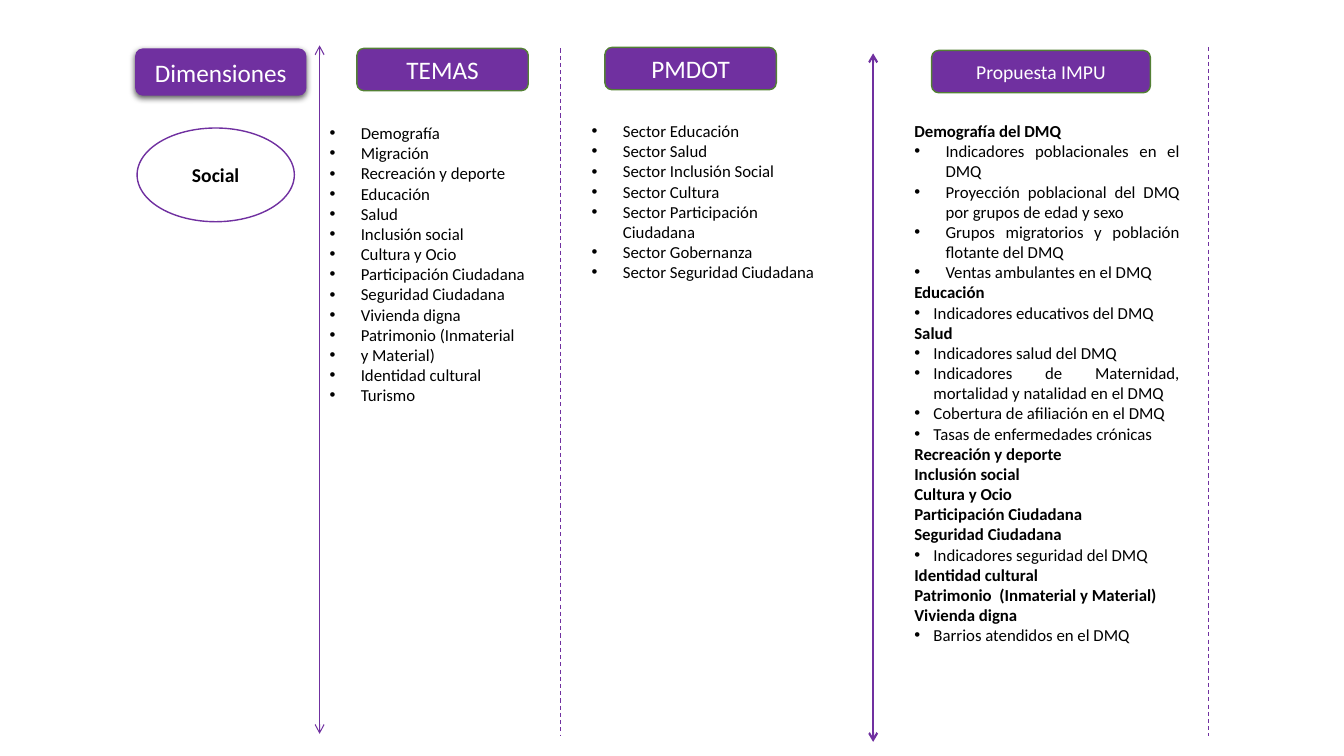
"""Build the social dimension slide: themes, PMDOT sectors and the IMPU proposal."""
from pptx import Presentation
from pptx.dml.color import RGBColor
from pptx.enum.dml import MSO_LINE_DASH_STYLE as DASH
from pptx.enum.shapes import MSO_CONNECTOR, MSO_SHAPE as SHAPE
from pptx.enum.text import MSO_ANCHOR, PP_ALIGN
from pptx.oxml.ns import qn
from pptx.util import Inches, Pt
from lxml.etree import SubElement

COLORS = {"purple": "7030A0", "green": "538035", "white": "FFFFFF", "black": "000000"}
FONT = "Calibri"
WIDE, NARROW = 0.31, 0.19

HEADERS = [
    ("Dimensiones", (1.34, 0.48, 1.7, 0.47), 18, None),
    ("TEMAS", (3.54, 0.48, 1.7, 0.42), 18, "green"),
    ("PMDOT", (6, 0.47, 1.7, 0.42), 18, "green"),
    ("Propuesta IMPU", (9.24, 0.5, 2.17, 0.42), 14, "green"),
]
DIMENSION = ("Social", (1.36, 1.27, 1.56, 0.93))
ARROWS = [(3.17, 0.45, 7.28, 0.75), (8.66, 0.53, 7.36, 1.5)]
DIVIDERS = [(5.56, 0.48, 7.3, 0.75), (11.99, 0.47, 7.3, 0.75)]

THEMES = [
    "Demografía", "Migración", "Recreación y deporte", "Educación", "Salud",
    "Inclusión social", "Cultura y Ocio", "Participación Ciudadana",
    "Seguridad Ciudadana", "Vivienda digna", "Patrimonio (Inmaterial",
    "y Material)", "Identidad cultural", "Turismo",
]
SECTORS = [
    "Sector Educación", "Sector Salud", "Sector Inclusión Social", "Sector Cultura",
    "Sector Participación", "Ciudadana", "Sector Gobernanza",
    "Sector Seguridad Ciudadana",
]
CONTINUATION = "Ciudadana"
PROPOSAL = [
    ("Demografía del DMQ", WIDE, [
        "Indicadores poblacionales en el DMQ",
        "Proyección poblacional del DMQ por grupos de edad y sexo",
        "Grupos migratorios y población flotante del DMQ",
        "Ventas ambulantes en el DMQ",
    ]),
    ("Educación", NARROW, ["Indicadores educativos del DMQ"]),
    ("Salud", NARROW, [
        "Indicadores salud del DMQ",
        "Indicadores de Maternidad, mortalidad y natalidad en el DMQ",
        "Cobertura de afiliación en el DMQ",
        "Tasas de enfermedades crónicas",
    ]),
    ("Recreación y deporte", NARROW, []),
    ("Inclusión social", NARROW, []),
    ("Cultura y Ocio", NARROW, []),
    ("Participación Ciudadana", NARROW, []),
    ("Seguridad Ciudadana", NARROW, ["Indicadores seguridad del DMQ"]),
    ("Identidad cultural", NARROW, []),
    ("Patrimonio  (Inmaterial y Material)", NARROW, []),
    ("Vivienda digna", NARROW, ["Barrios atendidos en el DMQ"]),
]


def color(name):
    return RGBColor.from_string(COLORS[name])


def style(p, size, name, bold=False, align=PP_ALIGN.CENTER):
    p.alignment = align
    for r in p.runs:
        r.font.name, r.font.size, r.font.bold = FONT, Pt(size), bold
        r.font.color.rgb = color(name)


def add_label(slide, kind, text, box, size, fill, line, ink, bold=False):
    sp = slide.shapes.add_shape(kind, *map(Inches, box))
    sp.shadow.inherit = False
    sp.fill.solid()
    sp.fill.fore_color.rgb = color(fill)
    if line:
        sp.line.color.rgb = color(line)
        sp.line.width = Pt(1)
    else:
        sp.line.fill.background()
    tf = sp.text_frame
    tf.vertical_anchor = MSO_ANCHOR.MIDDLE
    tf.text = text
    style(tf.paragraphs[0], size, ink, bold)
    return sp


def add_shadow(sp):
    effects = sp._element.spPr.find(qn("a:effectLst"))
    shadow = SubElement(effects, qn("a:outerShdw"), blurRad=str(Pt(4.5)),
                        dist=str(Pt(1.5)), dir="5400000", rotWithShape="0")
    shade = SubElement(shadow, qn("a:srgbClr"), val=COLORS["black"])
    SubElement(shade, qn("a:alpha"), val="63000")


def add_rule(slide, x, top, bottom, width, arrows):
    line = slide.shapes.add_connector(
        MSO_CONNECTOR.STRAIGHT, Inches(x), Inches(top), Inches(x), Inches(bottom))
    line.line.color.rgb = color("purple")
    line.line.width = Pt(width)
    if arrows:
        ln = line.line._get_or_add_ln()
        for end in ("a:headEnd", "a:tailEnd"):
            SubElement(ln, qn(end), type="arrow")
    else:
        line.line.dash_style = DASH.DASH
    SubElement(line._element.spPr, qn("a:effectLst"))


def add_list(slide, box, items):
    tf = slide.shapes.add_textbox(*map(Inches, box)).text_frame
    tf.word_wrap = True
    for i, (text, indent, bullet) in enumerate(items):
        p = tf.add_paragraph() if i else tf.paragraphs[0]
        p.text = text
        style(p, 12, "black", not indent, PP_ALIGN.JUSTIFY)
        pPr = p._p.get_or_add_pPr()
        pPr.set("marL", str(Inches(indent)))
        if bullet:
            pPr.set("indent", str(-Inches(indent)))
            SubElement(pPr, qn("a:buFont"), typeface="Arial")
            SubElement(pPr, qn("a:buChar"), char="•")


def main():
    prs = Presentation()
    prs.slide_width, prs.slide_height = Inches(13.33), Inches(7.5)
    slide = prs.slides.add_slide(prs.slide_layouts[6])

    for rules, arrows in ((ARROWS, True), (DIVIDERS, False)):
        for rule in rules:
            add_rule(slide, *rule, arrows)

    for text, box, size, line in HEADERS:
        sp = add_label(slide, SHAPE.ROUNDED_RECTANGLE, text, box, size,
                       "purple", line, "white")
        if not line:
            add_shadow(sp)
    add_label(slide, SHAPE.OVAL, *DIMENSION, 14, "white", "purple", "black", True)

    proposal = []
    for heading, indent, points in PROPOSAL:
        proposal.append((heading, 0, False))
        proposal += [(point, indent, True) for point in points]
    add_list(slide, (3.17, 1.17, 2.39, 3.13), [(t, WIDE, True) for t in THEMES])
    add_list(slide, (5.77, 1.15, 3.01, 1.72),
             [(t, WIDE, t != CONTINUATION) for t in SECTORS])
    add_list(slide, (8.97, 1.15, 2.83, 6.35), proposal)

    prs.save("out.pptx")


if __name__ == "__main__":
    main()
